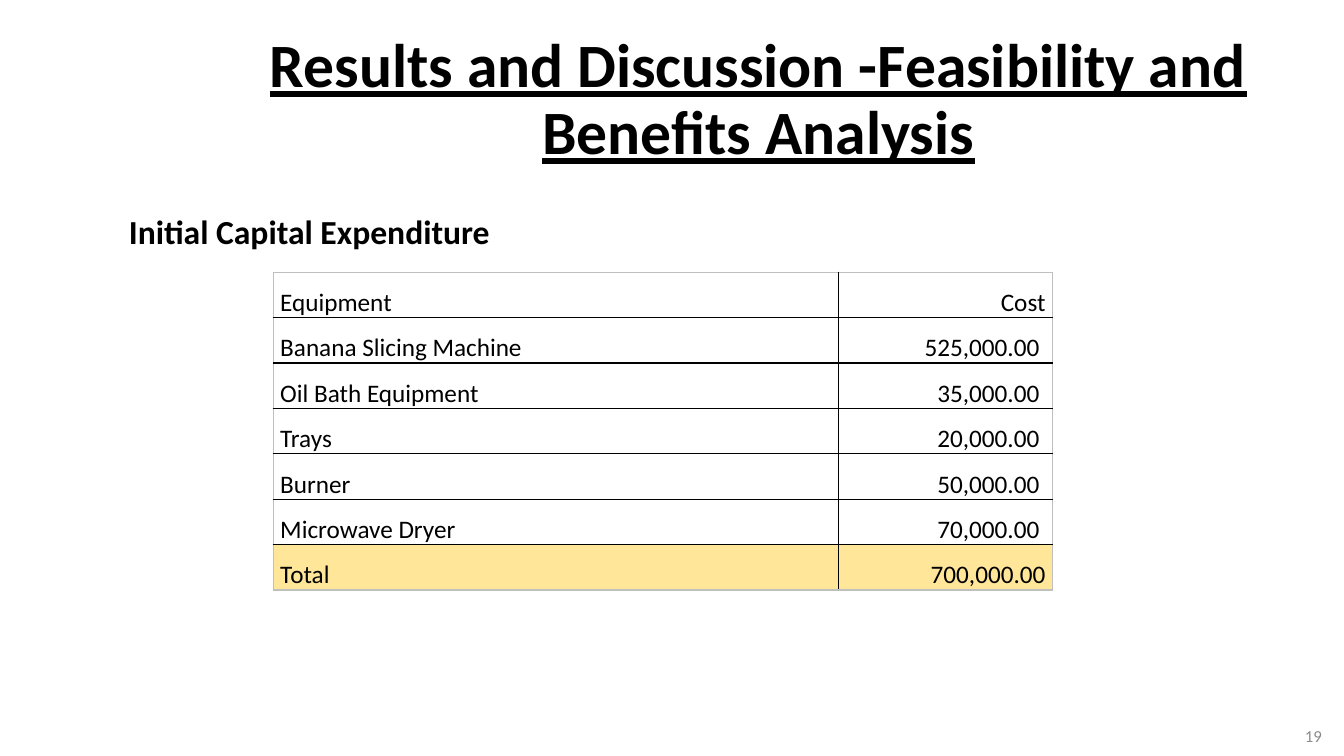
from pptx import Presentation
from pptx.dml.color import RGBColor
from pptx.enum.text import MSO_ANCHOR as Anchor, MSO_AUTO_SIZE as AutoSize, PP_ALIGN as Align
from pptx.oxml import parse_xml
from pptx.oxml.ns import nsdecls
from pptx.util import Emu, Pt

PX = 9144  # 100 px to the inch
BLACK, GREY, GOLD, OUTLINE = "000000", "8C8C8C", "FFE699", "BFBFBF"

EQUIPMENT_COSTS = [
    ("Equipment", "Cost"),
    ("Banana Slicing Machine", "525,000.00"),
    ("Oil Bath Equipment", "35,000.00"),
    ("Trays", "20,000.00"),
    ("Burner", "50,000.00"),
    ("Microwave Dryer", "70,000.00"),
    ("Total", "700,000.00"),
]


def px(count):
    return Emu(count * PX)


def color(code):
    return RGBColor.from_string(code)


def set_all(target, values):
    for name, value in values.items():
        setattr(target, name, value)


def write(frame, text, size, align, code=BLACK, spacing=None, **font_format):
    """Put one formatted paragraph into a text frame."""
    para = frame.paragraphs[0]
    set_all(para, {"alignment": align, "line_spacing": spacing})
    span = para.add_run()
    span.text = text
    set_all(span.font, {"name": "Calibri", "size": Pt(size), **font_format})
    span.font.color.rgb = color(code)


def place(shape, box):
    set_all(shape, dict(zip(("left", "top", "width", "height"), map(px, box))))


def add_title(page, box):
    title = page.shapes.title
    place(title, box)
    set_all(title.text_frame, {"word_wrap": True, "auto_size": AutoSize.NONE,
                               "vertical_anchor": Anchor.MIDDLE})
    write(title.text_frame, "Results and Discussion -Feasibility and Benefits Analysis",
          44, Align.CENTER, spacing=0.9, bold=True, underline=True)


def add_label(page, box, text, size, align, anchor=Anchor.TOP, **text_format):
    label = page.shapes.add_textbox(*map(px, box))
    set_all(label.text_frame, {"word_wrap": True, "vertical_anchor": anchor})
    write(label.text_frame, text, size, align, **text_format)


def add_border(cell, side, code):
    cell._tc.get_or_add_tcPr().append(parse_xml(
        f'<a:ln{side} {nsdecls("a")} w="{Pt(1)}"><a:solidFill>'
        f'<a:srgbClr val="{code}"/></a:solidFill></a:ln{side}>'))


def add_cost_table(page, box, rows):
    left, top, width, height = box
    last_row = len(rows) - 1
    table = page.shapes.add_table(len(rows), 2, *map(px, box)).table
    set_all(table, {"first_row": False, "horz_banding": False})
    cost_width = 212
    table.columns[0].width = px(width - cost_width)
    table.columns[1].width = px(cost_width)
    for r, row in enumerate(rows):
        table.rows[r].height = px(height // len(rows))
        for c, text in enumerate(row):
            cell = table.cell(r, c)
            is_amount = c == 1 and 0 < r < last_row
            set_all(cell, {"margin_left": px(7), "margin_right": px(13 if is_amount else 7),
                           "margin_top": 0, "margin_bottom": 0})
            outer = {"L": c == 0, "R": c == 1, "T": r == 0, "B": r == last_row}
            for side, is_outer in outer.items():
                add_border(cell, side, OUTLINE if is_outer else BLACK)
            if r == last_row:
                cell.fill.solid()
                cell.fill.fore_color.rgb = color(GOLD)
            else:
                cell.fill.background()
            write(cell.text_frame, text, 18, Align.RIGHT if c else Align.LEFT, spacing=1.5)


def build_feasibility_slide(deck):
    page = deck.slides.add_slide(deck.slide_layouts[5])
    add_label(page, (1021, 710, 300, 40), "19", 12, Align.RIGHT, Anchor.MIDDLE, code=GREY)
    add_label(page, (118, 204, 926, 50), "Initial Capital Expenditure", 24,
              Align.JUSTIFY, bold=True)
    add_cost_table(page, (271, 270, 773, 294), EQUIPMENT_COSTS)
    add_title(page, (211, 28, 1083, 145))


def main():
    deck = Presentation()
    set_all(deck, {"slide_width": px(1333), "slide_height": px(750)})
    build_feasibility_slide(deck)
    deck.save("out.pptx")


if __name__ == "__main__":
    main()
